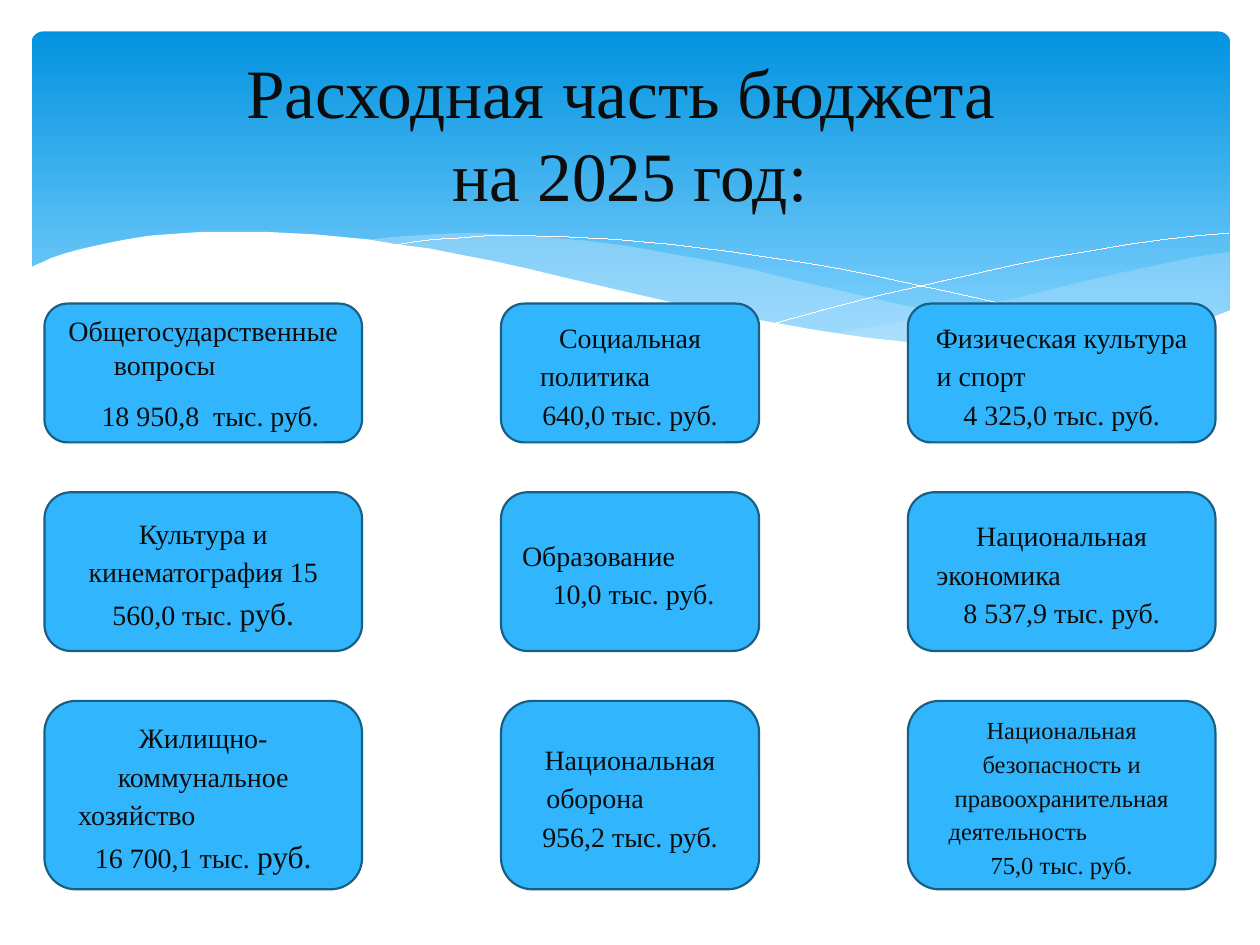
"""Build a slide with the 2025 budget expenditure by section."""
from lxml.etree import SubElement
from pptx import Presentation
from pptx.dml.color import RGBColor
from pptx.enum.shapes import MSO_SHAPE as SHAPE
from pptx.enum.text import MSO_ANCHOR as ANCHOR, PP_ALIGN as ALIGN
from pptx.oxml.ns import qn
from pptx.util import Pt

FONT, INK = "Times New Roman", "0D0D0D"
HUNDREDTH_INCH = Pt(0.72)


def color(value):
    return RGBColor.from_string(value)


def style_text(paragraph, size):
    paragraph.alignment = ALIGN.CENTER
    paragraph.font.name = FONT
    paragraph.font.size = Pt(size)
    paragraph.font.color.rgb = color(INK)


prs = Presentation()
prs.slide_width, prs.slide_height = Pt(720), Pt(540)
slide = prs.slides.add_slide(prs.slide_layouts[6])
shapes = slide.shapes

banner = shapes.add_shape(SHAPE.ROUNDED_RECTANGLE, Pt(18), Pt(18), Pt(685), Pt(194.5))
banner.adjustments[0] = 0.034
banner.shadow.inherit = False
banner.line.fill.background()
banner.fill.gradient()
banner.fill.gradient_angle = 270
for stop, (position, shade) in zip(banner.fill.gradient_stops, [(0, "0293E0"), (0.9, "83D3FE")]):
    stop.position = position
    stop.color.rgb = color(shade)

right_wave = [
    (975, 200), (948, 204), (921, 210), (891, 216), (861, 223), (805, 237), (753, 248),
    (706, 257), (661, 265), (691, 269), (719, 272), (745, 275), (769, 277), (803, 278),
    (835, 277), (863, 275), (889, 272), (913, 267), (935, 262), (949, 257), (963, 252),
    (976, 247), (976, 200)]
middle_wave = [
    (893, 273), (866, 269), (837, 265), (807, 260), (775, 254), (741, 247), (706, 240),
    (668, 231), (629, 222), (598, 214), (569, 208), (541, 203), (514, 198), (489, 194),
    (465, 191), (442, 189), (420, 187), (399, 186), (380, 185), (361, 185), (344, 186),
    (313, 188), (286, 191), (323, 196), (362, 203), (404, 211), (449, 222), (491, 232),
    (530, 240), (566, 248), (601, 255), (634, 261), (665, 266), (695, 270), (722, 274),
    (748, 276), (773, 277), (796, 278), (828, 278), (857, 277), (876, 275), (893, 273)]
falling_line = [
    (309, 195), (328, 192), (344, 190), (363, 189), (387, 187), (416, 187), (450, 188),
    (489, 190), (533, 194), (582, 200), (608, 204), (636, 208), (665, 213), (695, 219),
    (727, 226), (760, 233), (795, 241), (831, 251), (869, 261), (907, 272)]
rising_line = [
    (613, 257), (653, 246), (695, 235), (748, 223), (806, 210), (836, 204), (866, 199),
    (895, 194), (924, 190), (951, 187), (975, 185)]
white_wave = [
    (977, 246), (959, 253), (940, 259), (920, 265), (899, 269), (875, 273), (850, 275),
    (823, 277), (793, 276), (761, 275), (726, 272), (688, 268), (648, 262), (603, 254),
    (555, 245), (503, 233), (447, 220), (418, 213), (391, 207), (365, 202), (340, 197),
    (316, 194), (292, 190), (271, 188), (250, 186), (230, 185), (211, 184), (161, 184),
    (146, 185), (132, 186), (119, 187), (106, 189), (95, 191), (85, 193), (76, 195),
    (67, 197), (59, 199), (52, 201), (46, 203), (40, 205), (36, 207), (29, 210),
    (23, 213), (23, 329), (977, 329)]

for points, fill, opacity in [
        (right_wave, "C6E7FC", 29), (middle_wave, "C6E7FC", 40),
        (falling_line, None, None), (rising_line, None, None), (white_wave, "FFFFFF", 100)]:
    outline = shapes.build_freeform(*points[0], scale=HUNDREDTH_INCH)
    outline.add_line_segments(points[1:], close=fill is not None)
    wave = outline.convert_to_shape()
    wave.shadow.inherit = False
    if fill is None:
        wave.fill.background()
        wave.line.color.rgb = color("FFFFFF")
        wave.line.width = Pt(0.01)
        continue
    wave.line.fill.background()
    wave.fill.solid()
    wave.fill.fore_color.rgb = color(fill)
    if opacity < 100:
        tint = wave._element.spPr.find(qn("a:solidFill"))[0]
        SubElement(tint, qn("a:alpha"), val=str(opacity * 1000))

title = shapes.add_textbox(Pt(36), Pt(26.5), Pt(648), Pt(98.5)).text_frame
title.word_wrap = True
title.vertical_anchor = ANCHOR.MIDDLE
title.text = "Расходная часть бюджета \vна 2025 год:"
style_text(title.paragraphs[0], 39.6)

columns = [(25.4, 181.5), (286.3, 147.5), (518.8, 175.8)]
rows = [(173.5, 79.3), (281.3, 90.7), (400.5, 107.7)]

# column, row, text size, line spacing, (text, sideways shift, larger ending)
sections = [
    (0, 0, 16, 1, [("Общегосударственные", 0, ""), ("вопросы", -22, ""),
                   ("18 950,8  тыс. руб.", 4, "")]),
    (0, 1, 16, 1.15, [("Культура и кинематография 15 560,0 тыс. ", 0, "руб.")]),
    (0, 2, 16, 1.15, [("Жилищно- коммунальное", 0, ""), ("хозяйство", -38, ""),
                      ("16 700,1 тыс. ", 0, "руб.")]),
    (1, 0, 16, 1.15, [("Социальная", 0, ""), ("политика", -20, ""),
                      ("640,0 тыс. руб.", 0, "")]),
    (1, 1, 16, 1.15, [("Образование", -18, ""), ("10,0 тыс. руб.", 2, "")]),
    (1, 2, 16, 1.15, [("Национальная", 0, ""), ("оборона", -20, ""),
                      ("956,2 тыс. руб.", 0, "")]),
    (2, 0, 16, 1.15, [("Физическая культура", 0, ""), ("и спорт", -46, ""),
                      ("4 325,0 тыс. руб.", 0, "")]),
    (2, 1, 16, 1.15, [("Национальная", 0, ""), ("экономика", -36, ""),
                      ("8 537,9 тыс. руб.", 0, "")]),
    (2, 2, 14, 1.15, [("Национальная безопасность и правоохранительная", 0, ""),
                      ("деятельность", -25, ""), ("75,0 тыс. руб.", 0, "")]),
]

for column, row, size, spacing, lines in sections:
    (left, width), (top, height) = columns[column], rows[row]
    section = shapes.add_shape(
        SHAPE.FLOWCHART_ALTERNATE_PROCESS, Pt(left), Pt(top), Pt(width), Pt(height))
    section.shadow.inherit = False
    section.fill.solid()
    section.fill.fore_color.rgb = color("31B6FD")
    section.line.color.rgb = color("195F84")
    section.line.width = Pt(1.25)
    frame = section.text_frame
    frame.vertical_anchor = ANCHOR.MIDDLE
    for index, (text, shift, ending) in enumerate(lines):
        paragraph = frame.add_paragraph() if index else frame.paragraphs[0]
        style_text(paragraph, size)
        paragraph.line_spacing = float(spacing)
        is_last = index == len(lines) - 1
        paragraph.space_after = Pt(10 if is_last or (spacing == 1 and index) else 0)
        paragraph.add_run().text = text
        if ending:
            larger = paragraph.add_run()
            larger.text = ending
            larger.font.size = Pt(18)
        properties = paragraph._p.get_or_add_pPr()
        properties.set("marL", str(Pt(max(0, 2 * shift))))
        properties.set("marR", str(Pt(max(0, -2 * shift))))
        properties.set("indent", "0")

prs.save("out.pptx")
